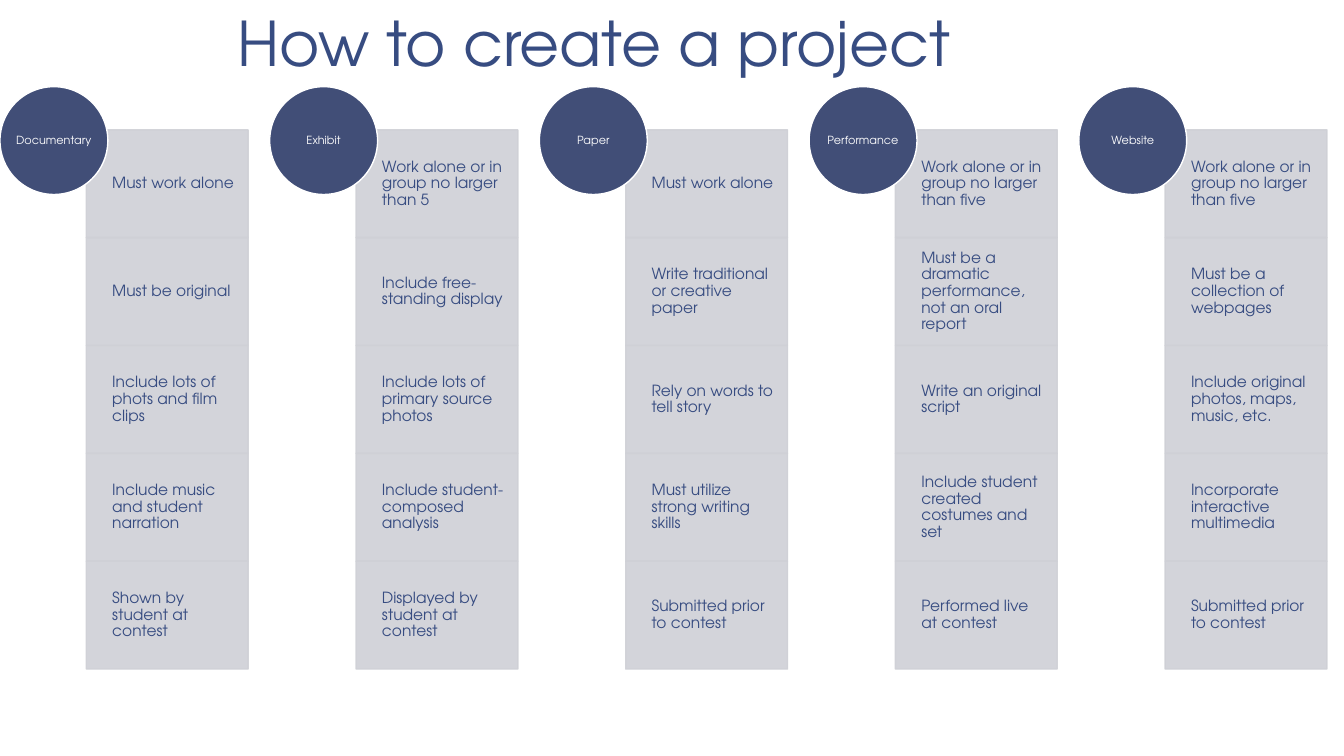
import dataclasses
import pptx
import pptx.util
import pptx.dml.color
import pptx.enum.shapes
import pptx.enum.text
import pptx.oxml
import pptx.oxml.ns

Inches = pptx.util.Inches
Pt = pptx.util.Pt
Shape = pptx.enum.shapes.MSO_SHAPE
Align = pptx.enum.text.PP_ALIGN
Anchor = pptx.enum.text.MSO_ANCHOR


@dataclasses.dataclass(frozen=True)
class Theme:
    """Colours, type sizes and font of the slide."""
    font: str = "TeX Gyre Adventor"
    ink: str = "374C81"
    disc: str = "414E77"
    cell: str = "CFD0D6"
    white: str = "FFFFFF"
    title: int = 44
    body: int = 11
    label: int = 8


THEME = Theme()
WIDTH, HEIGHT = 13.33, 7.5
UNIT = 1.07
STEP = 2.5 * UNIT
TOP = 0.86
PROJECTS = {
    "Documentary": [
        "Must work alone",
        "Must be original",
        "Include lots of phots and film clips",
        "Include music and student narration",
        "Shown by student at contest",
    ],
    "Exhibit": [
        "Work alone or in group no larger than 5",
        "Include free-standing display",
        "Include lots of primary source photos",
        "Include student-composed analysis",
        "Displayed by student at contest",
    ],
    "Paper": [
        "Must work alone",
        "Write traditional or creative paper",
        "Rely on words to tell story",
        "Must utilize strong writing skills",
        "Submitted prior to contest",
    ],
    "Performance": [
        "Work alone or in group no larger than five",
        "Must be a dramatic performance, not an oral report",
        "Write an original script",
        "Include student created costumes and set",
        "Performed live at contest",
    ],
    "Website": [
        "Work alone or in group no larger than five",
        "Must be a collection of webpages",
        "Include original photos, maps, music, etc.",
        "Incorporate interactive multimedia",
        "Submitted prior to contest",
    ],
}


def color(code):
    """Turn a hex code into a colour."""
    return pptx.dml.color.RGBColor.from_string(code)


def write(shape, text, size, ink, align, anchor, inset, space, wrap=True):
    """Set one formatted line of text in a shape."""
    frame = shape.text_frame
    frame.auto_size = pptx.enum.text.MSO_AUTO_SIZE.NONE
    frame.word_wrap = wrap
    frame.vertical_anchor = anchor
    (frame.margin_left, frame.margin_top,
     frame.margin_right, frame.margin_bottom) = map(Inches, inset)
    para = frame.paragraphs[0]
    para.alignment = align
    para.line_spacing = space
    para.space_before = Pt(0)
    run = para.add_run()
    run.text = text
    run.font.name = THEME.font
    run.font.size = Pt(size)
    run.font.color.rgb = color(ink)


def draw(group, kind, box, fill, line):
    """Add a flat shape with its fill and outline."""
    shape = group.shapes.add_shape(kind, *map(Inches, box))
    shape.shadow.inherit = False
    shape.fill.solid()
    shape.fill.fore_color.rgb = color(fill)
    shape.line.color.rgb = color(line)
    shape.line.width = Pt(1)
    return shape


def fade(shape, share):
    """Make the fill and outline partly transparent."""
    for node in shape.element.spPr.iter(pptx.oxml.ns.qn("a:srgbClr")):
        alpha = pptx.oxml.parse_xml(
            f'<a:alpha {pptx.oxml.ns.nsdecls("a")} val="{share * 1000}"/>')
        node.append(alpha)


def head(slide, box):
    """Place the slide title in its box."""
    title = slide.shapes.title
    title.left, title.top, title.width, title.height = map(Inches, box)
    write(title, "How to create a project", THEME.title, THEME.ink,
          Align.LEFT, Anchor.BOTTOM, (0.13, 0.07, 0.13, 0.07), 0.85)


def stack(slide, left, top, unit, name, rules):
    """Place one project: its stacked rules and the disc on their corner."""
    group = slide.shapes.add_group_shape()
    for row, rule in enumerate(rules):
        box = (left + 0.8 * unit, top + (row + 0.4) * unit, 1.5 * unit, unit)
        cell = draw(group, Shape.RECTANGLE, box, THEME.cell, THEME.cell)
        fade(cell, 90)
        write(cell, rule, THEME.body, THEME.ink, Align.LEFT, Anchor.MIDDLE,
              (0.24 * unit, 0.09, 0.09, 0.09), 0.9)
    disc = draw(group, Shape.OVAL, (left, top, unit, unit),
                THEME.disc, THEME.white)
    write(disc, name, THEME.label, THEME.white, Align.CENTER, Anchor.MIDDLE,
          (0, 0, 0, 0), 0.9, wrap=False)


def main():
    """Build and save the slide."""
    deck = pptx.Presentation()
    deck.slide_width, deck.slide_height = Inches(WIDTH), Inches(HEIGHT)
    slide = deck.slides.add_slide(deck.slide_layouts[5])
    head(slide, (WIDTH / 6, TOP - 1.53, WIDTH * 5 / 6, 1.53))
    for col, (name, rules) in enumerate(PROJECTS.items()):
        stack(slide, col * STEP, TOP, UNIT, name, rules)
    deck.save("out.pptx")


if __name__ == "__main__":
    main()
